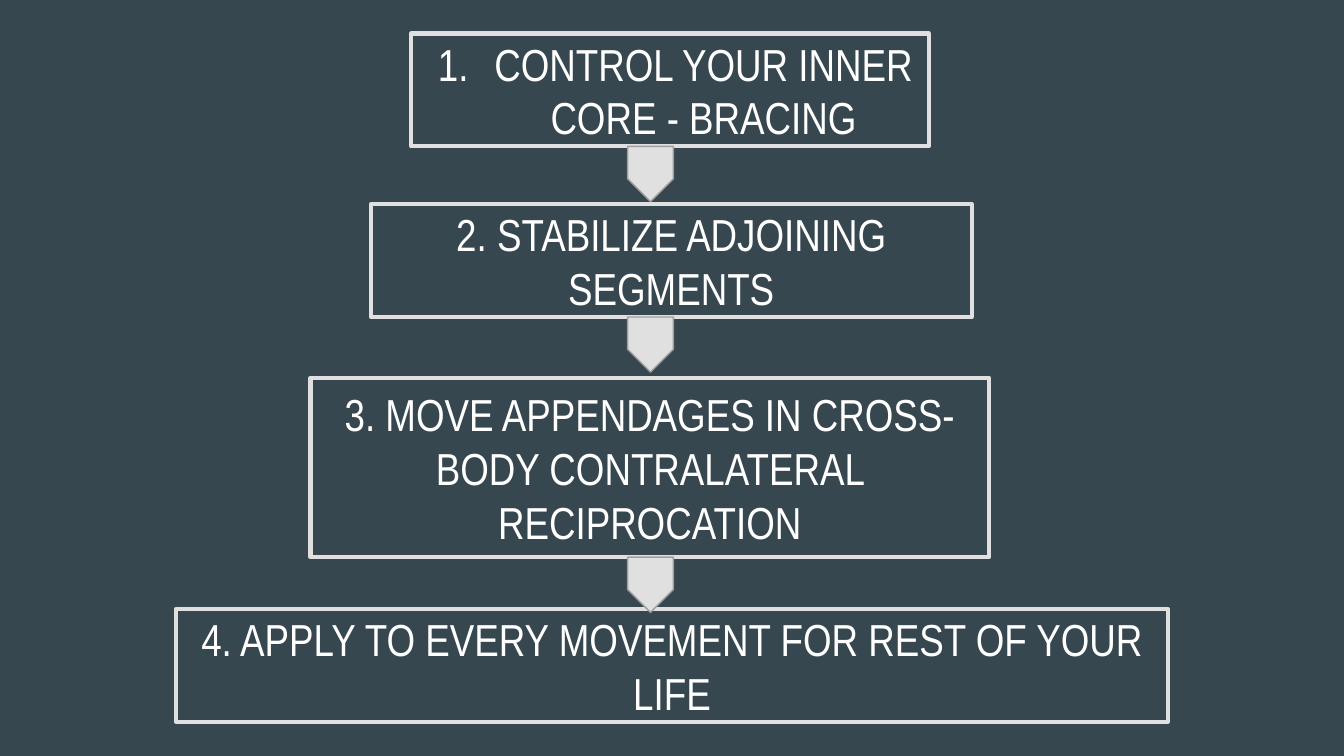
import pptx
import pptx.dml.color
import pptx.enum.shapes
import pptx.enum.text
import pptx.oxml
import pptx.oxml.ns
import pptx.util

SLATE = pptx.dml.color.RGBColor(0x37, 0x47, 0x4F)
PALE = pptx.dml.color.RGBColor(0xE0, 0xE0, 0xE0)
GREY = pptx.dml.color.RGBColor(0x9E, 0x9E, 0x9E)
WHITE = pptx.dml.color.RGBColor(0xFF, 0xFF, 0xFF)
SHAPES = pptx.enum.shapes.MSO_SHAPE

# Widescreen slide, 16 to 9
deck = pptx.Presentation()
deck.slide_width = pptx.util.Inches(10)
deck.slide_height = deck.slide_width * 9 // 16
slide = deck.slides.add_slide(deck.slide_layouts[6])
slide.background.fill.solid()
slide.background.fill.fore_color.rgb = SLATE

# Grid: 100 columns by 100 rows
COLUMN = deck.slide_width / 100
ROW = deck.slide_height / 100


def add_block(kind, left, top, width, height, fill, outline, weight):
    block = slide.shapes.add_shape(
        kind, round(left * COLUMN), round(top * ROW),
        round(width * COLUMN), round(height * ROW))
    block.shadow.inherit = False
    block.fill.solid()
    block.fill.fore_color.rgb = fill
    block.line.color.rgb = outline
    block.line.width = pptx.util.Pt(weight)
    return block


# Steps: left, top, width, height, wording
STEPS = [
    (30.6, 4.44, 38.5, 14.93, "CONTROL YOUR INNER CORE - BRACING"),
    (27.6, 27, 44.7, 14.93, "2. STABILIZE ADJOINING SEGMENTS"),
    (23.1, 50, 50.5, 23.7,
     "3. MOVE APPENDAGES IN CROSS-BODY CONTRALATERAL RECIPROCATION"),
    (13.1, 80.53, 73.8, 14.93,
     "4. APPLY TO EVERY MOVEMENT FOR REST OF YOUR LIFE"),
]
INSET = pptx.util.Inches(0.1)
FRAME_FORMAT = {
    "word_wrap": True,
    "vertical_anchor": pptx.enum.text.MSO_ANCHOR.MIDDLE,
    "margin_left": INSET, "margin_right": INSET,
    "margin_top": INSET, "margin_bottom": INSET,
}
FONT_FORMAT = {"name": "Arial Narrow", "size": pptx.util.Pt(24)}

step_lines = []
for left, top, width, height, wording in STEPS:
    step = add_block(SHAPES.RECTANGLE, left, top, width, height,
                     SLATE, PALE, 2.25)
    for attribute, value in FRAME_FORMAT.items():
        setattr(step.text_frame, attribute, value)
    step_line = step.text_frame.paragraphs[0]
    step_line.alignment = pptx.enum.text.PP_ALIGN.CENTER
    step_run = step_line.add_run()
    step_run.text = wording
    for attribute, value in FONT_FORMAT.items():
        setattr(step_run.font, attribute, value)
    step_run.font.color.rgb = WHITE
    step_lines.append(step_line)

# Automatic number on the first step
numbering = step_lines[0]._p.get_or_add_pPr()
numbering.set("marL", str(pptx.util.Inches(0.5)))
numbering.set("indent", str(pptx.util.Inches(-0.42)))
namespace = pptx.oxml.ns.nsdecls("a")
for bullet_xml in (
    f'<a:buClr {namespace}><a:srgbClr val="{WHITE}"/></a:buClr>',
    f'<a:buFont {namespace} typeface="Arial Narrow"/>',
    f'<a:buAutoNum {namespace} type="arabicPeriod"/>',
):
    numbering.append(pptx.oxml.parse_xml(bullet_xml))

# Arrows hang from the bottom edge of every step but the last
for left, top, width, height, wording in STEPS[:-1]:
    arrow = add_block(SHAPES.DOWN_ARROW, 46.7, top + height, 3.4, 7.3,
                      PALE, GREY, 0.75)
    arrow.adjustments[0] = 1
    arrow.adjustments[1] = 0.5

deck.save("out.pptx")
